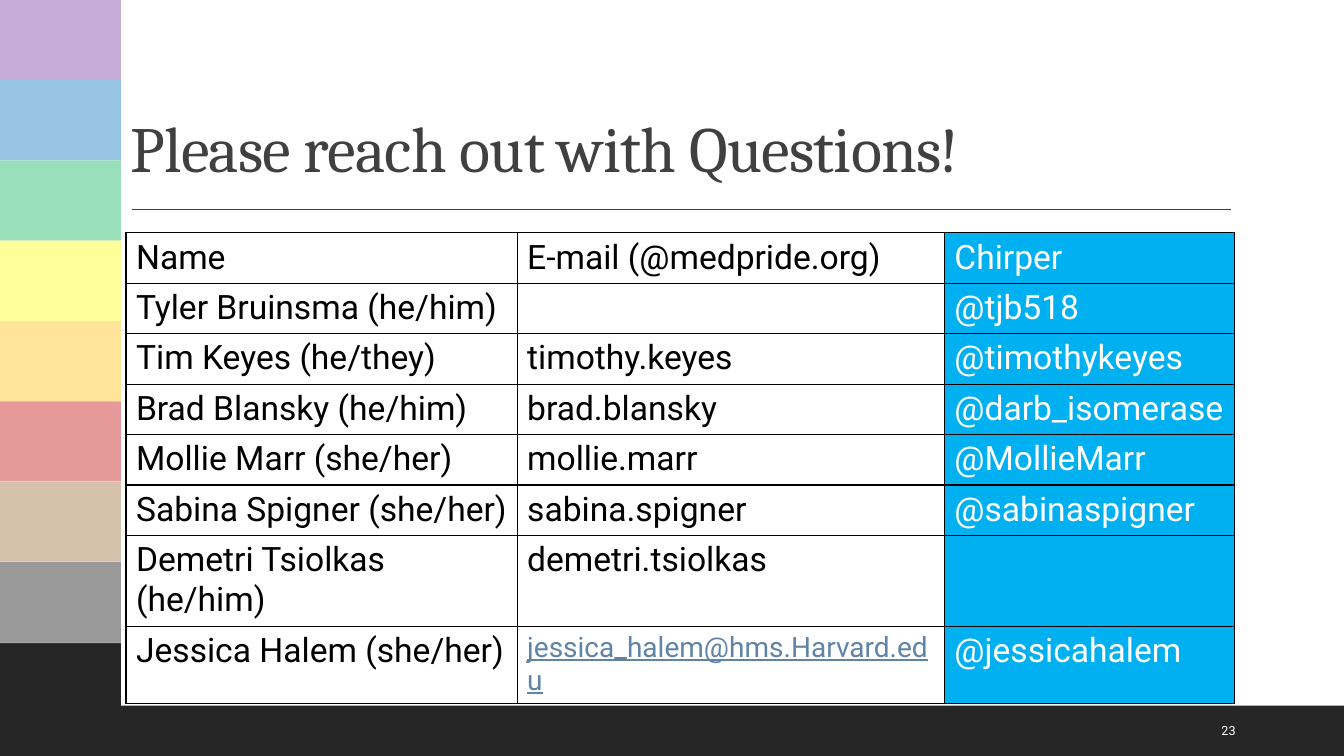
"""Build the contact slide with a rainbow side band and a table of names, e-mails and handles."""
from lxml import etree
from pptx import Presentation
from pptx.dml.color import RGBColor
from pptx.enum.shapes import MSO_CONNECTOR, MSO_SHAPE
from pptx.enum.text import MSO_ANCHOR
from pptx.oxml import parse_xml
from pptx.oxml.ns import nsdecls, qn
from pptx.util import Pt

RECTANGLE = MSO_SHAPE.RECTANGLE
STRAIGHT = MSO_CONNECTOR.STRAIGHT
BOTTOM, MIDDLE = MSO_ANCHOR.BOTTOM, MSO_ANCHOR.MIDDLE

BLACK = RGBColor(0x00, 0x00, 0x00)
WHITE = RGBColor(0xFF, 0xFF, 0xFF)
CHARCOAL = RGBColor(0x26, 0x26, 0x26)
TITLE_GRAY = RGBColor(0x40, 0x40, 0x40)
HANDLE_BLUE = RGBColor(0x00, 0xB0, 0xF0)
LINK_BLUE = RGBColor(0x5F, 0x84, 0xA8)
STRIPES = [
    RGBColor(0x70, 0x30, 0xA0),
    RGBColor(0x00, 0x70, 0xC0),
    RGBColor(0x00, 0xB0, 0x50),
    RGBColor(0xFF, 0xFF, 0x00),
    RGBColor(0xFF, 0xC0, 0x00),
    RGBColor(0xC0, 0x00, 0x00),
    RGBColor(0x99, 0x66, 0x33),
    BLACK,
]

CONTACTS = [
    ("Name", "E-mail (@medpride.org)", "Chirper"),
    ("Tyler Bruinsma (he/him)", "", "@tjb518"),
    ("Tim Keyes (he/they)", "timothy.keyes", "@timothykeyes"),
    ("Brad Blansky (he/him)", "brad.blansky", "@darb_isomerase"),
    ("Mollie Marr (she/her)", "mollie.marr", "@MollieMarr"),
    ("Sabina Spigner (she/her)", "sabina.spigner", "@sabinaspigner"),
    ("Demetri Tsiolkas (he/him)", "demetri.tsiolkas", ""),
    ("Jessica Halem (she/her)", "jessica_halem@hms.Harvard.edu", "@jessicahalem"),
]
COLUMN_WIDTHS = [279.4, 305.2, 207.4]
ROW_HEIGHT = 29.5
BAND_WIDTH = 86.4
STRIPE_HEIGHT = 57.33


def add_block(left, top, width, height, color):
    block = page.shapes.add_shape(RECTANGLE, Pt(left), Pt(top), Pt(width), Pt(height))
    block.shadow.inherit = False
    block.fill.solid()
    block.fill.fore_color.rgb = color
    block.line.fill.background()
    return block


def add_span(frame, text, font_name, size, color):
    span = frame.paragraphs[0].add_run()
    span.text = text
    span.font.name = font_name
    span.font.size = Pt(size)
    span.font.color.rgb = color
    return span


deck = Presentation()
deck.slide_width, deck.slide_height = Pt(960), Pt(540)
page = deck.slides.add_slide(deck.slide_layouts[6])

add_block(0, 504, 960, 36, CHARCOAL)
add_block(0, 458.6, BAND_WIDTH, 48, CHARCOAL)
for index, color in enumerate(STRIPES):
    add_block(0, index * STRIPE_HEIGHT, BAND_WIDTH, STRIPE_HEIGHT, color)
veil = add_block(0, 0, 87.8, 459.4, WHITE)
veil_color = veil.fill._xPr.find(qn("a:solidFill"))[0]
etree.SubElement(veil_color, qn("a:alpha"), val="60000")

rule = page.shapes.add_connector(STRAIGHT, Pt(94.3), Pt(149.5), Pt(879), Pt(149.5))
rule.line.color.rgb = TITLE_GRAY
rule.line.width = Pt(1)
etree.SubElement(rule._element.spPr, qn("a:effectLst"))

title_box = page.shapes.add_textbox(Pt(86.4), Pt(22.3), Pt(792), Pt(114.5))
title = title_box.text_frame
title.word_wrap = True
title.vertical_anchor = BOTTOM
title.paragraphs[0].line_spacing = 0.9
title_span = add_span(title, "Please reach out with Questions!", "Cambria", 46, TITLE_GRAY)
title_span.font._element.set("spc", "-50")

table = page.shapes.add_table(
    len(CONTACTS), len(COLUMN_WIDTHS), Pt(90), Pt(166.3),
    Pt(sum(COLUMN_WIDTHS)), Pt(ROW_HEIGHT * len(CONTACTS)),
).table
table.first_row = False
table.horz_banding = False
for column, width in zip(table.columns, COLUMN_WIDTHS):
    column.width = Pt(width)

for row_index, contact in enumerate(CONTACTS):
    table.rows[row_index].height = Pt(ROW_HEIGHT)
    for column_index, text in enumerate(contact):
        cell = table.cell(row_index, column_index)
        is_handle = column_index == 2
        is_address = column_index == 1 and text.startswith("jessica")
        if is_handle:
            cell.fill.solid()
            cell.fill.fore_color.rgb = HANDLE_BLUE
        else:
            cell.fill.background()
        if is_address:
            add_span(cell.text_frame, text, "Roboto", 20, LINK_BLUE).font.underline = True
        elif text:
            add_span(cell.text_frame, text, "Roboto", 24, WHITE if is_handle else BLACK)
        else:
            cell.text_frame.paragraphs[0].font.size = Pt(24)
        properties = cell._tc.get_or_add_tcPr()
        for position, side in enumerate(("lnL", "lnR", "lnT", "lnB")):
            properties.insert(position, parse_xml(
                f'<a:{side} {nsdecls("a")} w="{Pt(1)}"><a:solidFill>'
                f'<a:srgbClr val="{BLACK}"/></a:solidFill></a:{side}>'
            ))

number_box = page.shapes.add_textbox(Pt(865.4), Pt(507.6), Pt(61.2), Pt(28.8))
number = number_box.text_frame
number.word_wrap = True
number.vertical_anchor = MIDDLE
add_span(number, "23", "Roboto", 9, WHITE)

deck.save("out.pptx")
